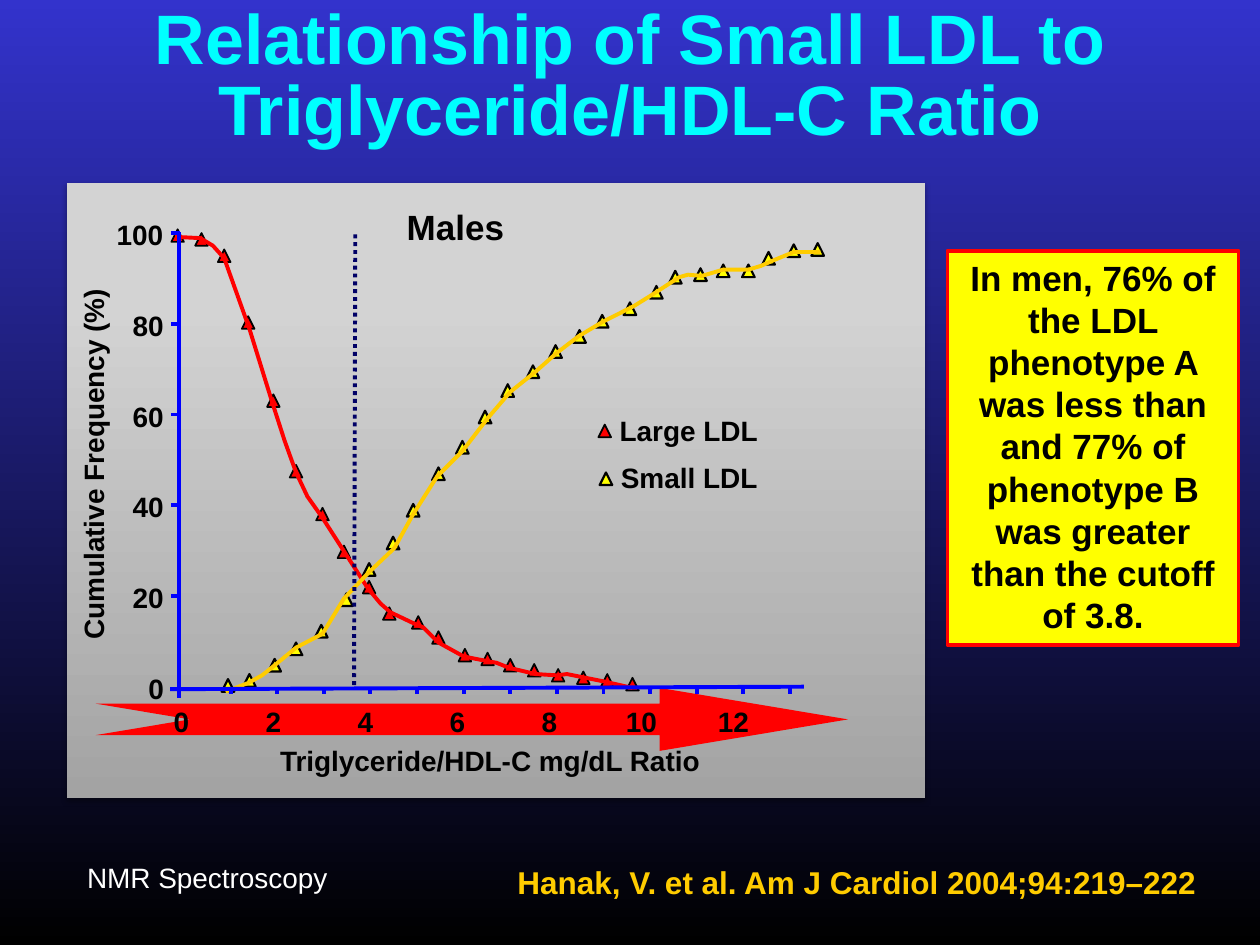
from lxml import etree
from pptx import Presentation
from pptx import util as u
from pptx.dml.color import RGBColor
from pptx.enum import dml, shapes, text
from pptx.oxml.ns import qn

Inches, Pt = u.Inches, u.Pt
AXIS_BLUE = "0000FF"


def paint(fill, color):
    """Make the fill of a shape, line or font solid."""
    fill.solid()
    fill.fore_color.rgb = RGBColor.from_string(color)


def write(box, words, size=16, color="000000", bold=True,
          align="CENTER", anchor="TOP", wrap=True, spacing=None):
    """Fill a text holder with one formatted paragraph."""
    frame = box.text_frame
    frame.word_wrap = wrap
    frame.vertical_anchor = text.MSO_ANCHOR[anchor]
    para = frame.paragraphs[0]
    para.alignment = text.PP_ALIGN[align]
    para.line_spacing = spacing
    span = para.add_run()
    span.text = words
    span.font.name, span.font.size, span.font.bold = "Arial", Pt(size), bold
    paint(span.font.fill, color)


deck = Presentation()
deck.slide_width, deck.slide_height = Inches(10), Inches(7.5)
page = deck.slides.add_slide(deck.slide_layouts[5])

# Background
backdrop = page.background.fill
backdrop.gradient()
backdrop.gradient_angle = 270
for stop, color in zip(backdrop.gradient_stops, ("3333CC", "000000")):
    stop.color.rgb = RGBColor.from_string(color)

# Title
title = page.shapes.title
title.left, title.top, title.width, title.height = 0, 0, Inches(10), Inches(1.25)
write(title, "Relationship of Small LDL to Triglyceride/HDL-C Ratio", size=40,
      color="00FFFF", anchor="MIDDLE", spacing=0.85)

# Grey panel with a soft shadow
panel = page.shapes.add_shape(shapes.MSO_SHAPE.RECTANGLE, Inches(0.53), Inches(1.45),
                              Inches(6.81), Inches(4.88))
panel.line.fill.background()
panel.fill.gradient()
panel.fill.gradient_angle = 90
for stop, color, position in zip(panel.fill.gradient_stops, ("A3A3A3", "D3D3D3"), (0, 0.8)):
    stop.color.rgb = RGBColor.from_string(color)
    stop.position = position
panel.shadow.inherit = False
effects = panel._element.spPr.find(qn("a:effectLst"))
shadow = etree.SubElement(effects, qn("a:outerShdw"), blurRad=str(Pt(3.1)),
                          dist=str(Pt(1.8)), dir="5400000", rotWithShape="0")
shade = etree.SubElement(shadow, qn("a:srgbClr"), val="000000")
etree.SubElement(shade, qn("a:alpha"), val="35000")

# Yellow finding box
finding = page.shapes.add_shape(shapes.MSO_SHAPE.RECTANGLE, Inches(7.52), Inches(1.99),
                                Inches(2.31), Inches(3.13))
finding.shadow.inherit = False
paint(finding.fill, "FFFF00")
paint(finding.line.fill, "FF0000")
finding.line.width = Pt(2.25)
write(finding, "In men, 76% of the LDL phenotype A was less than and 77% of "
      "phenotype B was greater than the cutoff of 3.8.", size=20)

# Series: name, marker fill, outline width, curve colour, legend marker, markers, curve
large_markers = [
    (1.36, 1.82), (1.55, 1.85), (1.73, 1.98), (1.92, 2.51), (2.12, 3.13), (2.3, 3.69),
    (2.51, 4.03), (2.68, 4.33), (2.88, 4.61), (3.04, 4.82), (3.27, 4.89), (3.43, 5.01),
    (3.64, 5.15), (3.82, 5.18), (4, 5.23), (4.19, 5.27), (4.38, 5.31), (4.58, 5.33),
    (4.77, 5.35), (4.97, 5.38)]
large_curve = [
    (1.39, 1.88), (1.59, 1.89), (1.69, 1.95), (1.78, 2.05), (1.98, 2.61), (2.16, 3.19),
    (2.26, 3.5), (2.35, 3.75), (2.44, 3.94), (2.56, 4.11), (2.74, 4.39), (2.92, 4.67),
    (3.02, 4.79), (3.1, 4.86), (3.31, 4.96), (3.36, 4.98), (3.48, 5.1), (3.68, 5.21),
    (3.88, 5.25), (3.94, 5.26), (4.04, 5.3), (4.25, 5.35), (4.42, 5.36), (4.5, 5.35),
    (4.6, 5.37), (4.8, 5.41), (5.02, 5.46)]
small_markers = [
    (1.76, 5.39), (1.93, 5.35), (2.13, 5.23), (2.3, 5.1), (2.5, 4.96), (2.7, 4.71),
    (2.88, 4.47), (3.07, 4.26), (3.23, 4), (3.43, 3.71), (3.62, 3.5), (3.8, 3.26),
    (3.98, 3.05), (4.18, 2.9), (4.36, 2.74), (4.55, 2.62), (4.73, 2.5), (4.95, 2.4),
    (5.16, 2.27), (5.31, 2.15), (5.51, 2.13), (5.69, 2.1), (5.89, 2.1), (6.05, 2),
    (6.25, 1.94), (6.44, 1.93)]
small_curve = [
    (1.79, 5.49), (1.97, 5.42), (2.08, 5.36), (2.18, 5.28), (2.35, 5.14), (2.56, 5.03),
    (2.73, 4.75), (2.93, 4.54), (3.13, 4.35), (3.28, 4.08), (3.47, 3.78), (3.67, 3.58),
    (3.87, 3.32), (4.05, 3.11), (4.25, 2.95), (4.42, 2.8), (4.59, 2.67), (4.79, 2.55),
    (5.03, 2.43), (5.19, 2.33), (5.39, 2.2), (5.46, 2.18), (5.57, 2.19), (5.74, 2.14),
    (5.94, 2.14), (6.04, 2.11), (6.13, 2.07), (6.3, 2), (6.51, 2)]
series = [
    ("Large LDL", "FF0000", 1, "FF0000", (4.75, 3.37), large_markers, large_curve),
    ("Small LDL", "FFFF00", 1.25, "FFCC00", (4.76, 3.75), small_markers, small_curve)]

for name, color, outline, curve_color, key, markers, points in series:
    legend = page.shapes.add_group_shape()
    spots = [(page.shapes, spot) for spot in markers] + [(legend.shapes, key)]
    for parent, (x, y) in spots:
        marker = parent.add_shape(shapes.MSO_SHAPE.ISOSCELES_TRIANGLE, Inches(x), Inches(y),
                                  Inches(0.1), Inches(0.1))
        marker.shadow.inherit = False
        paint(marker.fill, color)
        paint(marker.line.fill, "000000")
        marker.line.width = Pt(outline)
    label = legend.shapes.add_textbox(Inches(key[0] + 0.07), Inches(key[1] - 0.14),
                                      Inches(2.07), Inches(0.37))
    write(label, name, align="LEFT")

    start, *rest = [(Inches(x), Inches(y)) for x, y in points]
    builder = page.shapes.build_freeform(*start)
    builder.add_line_segments(rest, close=False)
    curve = builder.convert_to_shape()
    curve.shadow.inherit = False
    curve.fill.background()
    paint(curve.line.fill, curve_color)
    curve.line.width = Pt(2.25)

# Red arrow under the x axis
arrow = page.shapes.add_shape(shapes.MSO_SHAPE.NOTCHED_RIGHT_ARROW, Inches(0.76), Inches(5.46),
                              Inches(5.97), Inches(0.5))
arrow.adjustments[0], arrow.adjustments[1] = 0.5, 2.99
arrow.shadow.inherit = False
paint(arrow.fill, "FF0000")
arrow.line.fill.background()

# Cutoff line, axes and ticks
lines = [(2.82, 1.86, 2.81, 5.46, "000066"),
         (1.42, 1.84, 1.42, 5.54, AXIS_BLUE),
         (1.35, 5.47, 6.38, 5.45, AXIS_BLUE)]
for i in range(5):
    y = 4.73 - 0.72 * i
    lines.append((1.36, y, 1.43, y, AXIS_BLUE))
for i in range(13):
    x = 1.83 + 0.37 * i
    lines.append((x, 5.46, x, 5.51, AXIS_BLUE))
for x1, y1, x2, y2, color in lines:
    line = page.shapes.add_connector(shapes.MSO_CONNECTOR.STRAIGHT, Inches(x1), Inches(y1),
                                     Inches(x2), Inches(y2))
    paint(line.line.fill, color)
    line.line.width = Pt(2.25)
    if color != AXIS_BLUE:
        line.line.dash_style = dml.MSO_LINE.ROUND_DOT
    etree.SubElement(line._element.spPr, qn("a:effectLst"))

# Text boxes: words, left, top, width, height, format
labels = [
    ("Males", 2.88, 1.58, 1.47, 0.43, dict(size=20)),
    ("Triglyceride/HDL-C mg/dL Ratio", 2.06, 5.85, 3.66, 0.37, {}),
    ("NMR Spectroscopy", 0.25, 6.78, 2.79, 0.37, dict(color="FFFFFF", bold=False)),
    ("Hanak, V. et al. Am J Cardiol 2004;94:219–222", 3.99, 6.8, 5.62, 0.4,
     dict(size=18, color="FFCC00", wrap=False))]
for i in range(7):
    labels.append((str(2 * i), 1.2 + 0.73 * i, 5.54, 0.48, 0.37, {}))
for i in range(6):
    value = str(20 * i)
    width = 0.25 + 0.13 * len(value)
    labels.append((value, 1.43 - width, 5.28 - 0.72 * i, width, 0.37, {}))
for words, left, top, width, height, style in labels:
    box = page.shapes.add_textbox(Inches(left), Inches(top), Inches(width), Inches(height))
    write(box, words, **style)

# Vertical axis title
axis_title = page.shapes.add_textbox(Inches(-0.88), Inches(3.37), Inches(3.24), Inches(0.37))
axis_title.rotation = 270
write(axis_title, "Cumulative Frequency (%)", align="LEFT")

deck.save("out.pptx")
